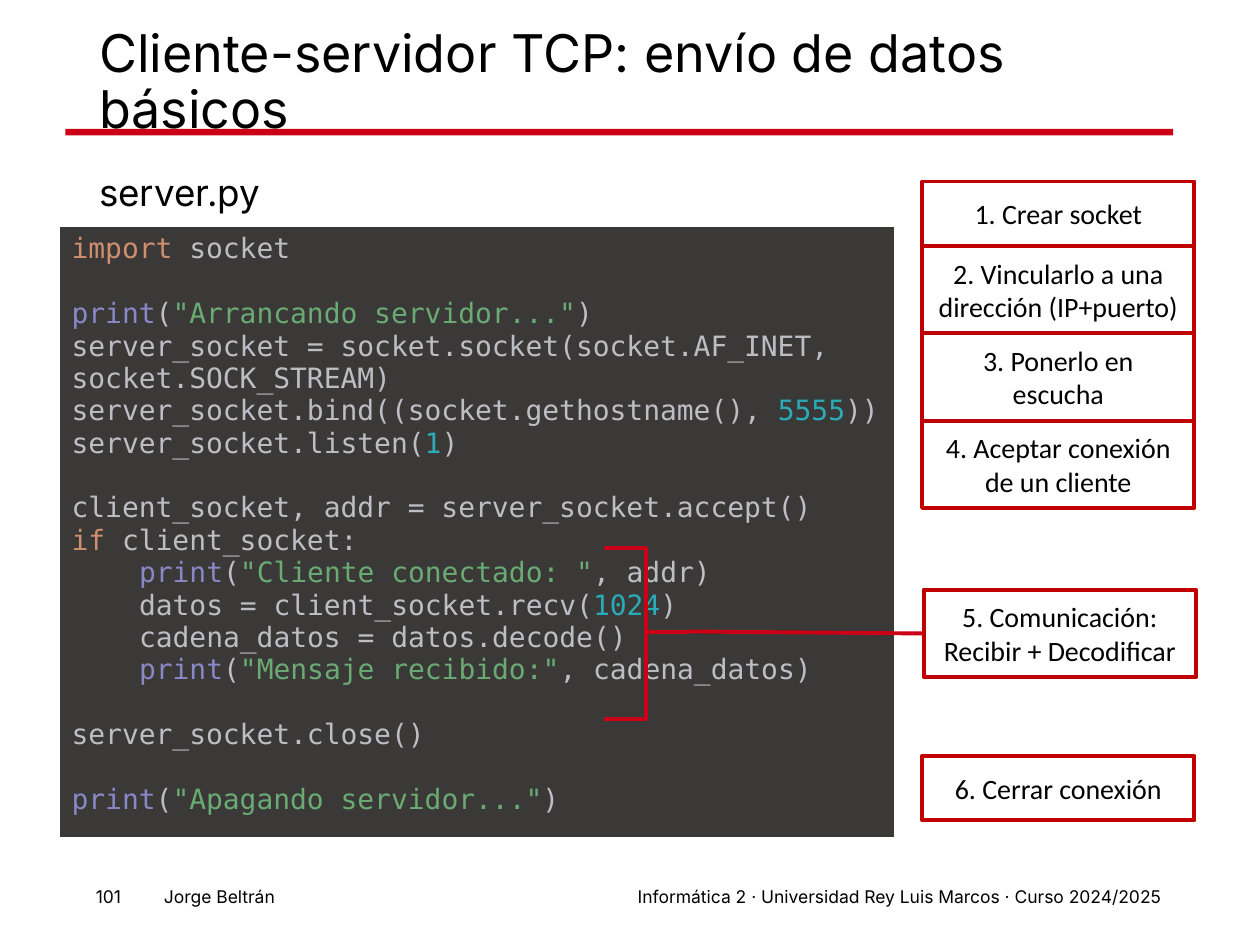
import pptx
import pptx.dml.color
import pptx.enum.shapes
import pptx.enum.text
import pptx.oxml
import pptx.oxml.ns
import pptx.util
from pptx.util import Cm

COLORS = {
    "rule": "CB0017",
    "border": "C00000",
    "black": "000000",
    "white": "FFFFFF",
    "panel": "3B3838",
    "plain": "BCBEC4",
    "keyword": "CF8E6D",
    "builtin": "8888C6",
    "string": "6AAB73",
    "number": "2AACB8",
}
ALIGN = pptx.enum.text.PP_ALIGN
ANCHOR = pptx.enum.text.MSO_ANCHOR
SHAPES = pptx.enum.shapes.MSO_SHAPE
CODE_SIZE = 16
CODE_LINE_HEIGHT = 18.6
CODE_INDENT = Cm(1.36)


def print_call(string, rest=")"):
    return [("print", "builtin"), ("(", "plain"), (string, "string"), (rest, "plain")]


# Each line: tokens, indent level, whether a gap of one line comes before it
CODE = [
    ([("import ", "keyword"), ("socket", "plain")], 0, False),
    (print_call('"Arrancando servidor..."'), 0, True),
    ([("server_socket = socket.socket(socket.AF_INET, socket.SOCK_STREAM)", "plain")], 0, False),
    ([("server_socket.bind((socket.gethostname(), ", "plain"), ("5555", "number"),
      ("))", "plain")], 0, False),
    ([("server_socket.listen(", "plain"), ("1", "number"), (")", "plain")], 0, False),
    ([("client_socket, addr = server_socket.accept()", "plain")], 0, True),
    ([("if ", "keyword"), ("client_socket:", "plain")], 0, False),
    (print_call('"Cliente conectado: "', ", addr)"), 1, False),
    ([("datos = client_socket.recv(", "plain"), ("1024", "number"), (")", "plain")], 1, False),
    ([("cadena_datos = datos.decode()", "plain")], 1, False),
    (print_call('"Mensaje recibido:"', ", cadena_datos)"), 1, False),
    ([("server_socket.close()", "plain")], 0, True),
    (print_call('"Apagando servidor..."'), 0, True),
]


def rgb(name):
    return pptx.dml.color.RGBColor.from_string(COLORS[name])


def set_font(paragraph, name, size, color="black"):
    paragraph.font.name = name
    paragraph.font.size = pptx.util.Pt(size)
    paragraph.font.color.rgb = rgb(color)


def add_text(slide, text, left, top, width, height, size):
    """Add a one-paragraph text box and return its frame and paragraph."""
    frame = slide.shapes.add_textbox(Cm(left), Cm(top), Cm(width), Cm(height)).text_frame
    frame.word_wrap = True
    paragraph = frame.paragraphs[0]
    paragraph.text = text
    set_font(paragraph, "Inter", size)
    return frame, paragraph


def add_heading(slide):
    frame, title = add_text(slide, "Cliente-servidor TCP: envío de datos básicos",
                            1.75, 1.02, 21.89, 1.32, 29.7)
    frame.vertical_anchor = ANCHOR.MIDDLE
    title.line_spacing = 0.9
    _, file_name = add_text(slide, "server.py", 1.75, 3.12, 21.89, 1.27, 21)
    file_name.line_spacing = 1.2
    file_name.space_before = pptx.util.Pt(7.5)


def add_footer(slide, text, left, width):
    frame, paragraph = add_text(slide, text, left, 17.73, width, 0.69, 10)
    frame.auto_size = pptx.enum.text.MSO_AUTO_SIZE.SHAPE_TO_FIT_TEXT
    paragraph.alignment = ALIGN.RIGHT


def add_rule(slide):
    rule = slide.shapes.add_shape(SHAPES.RECTANGLE, Cm(1.32), Cm(2.6), Cm(22.33), Cm(0.13))
    rule.shadow.inherit = False
    rule.fill.solid()
    rule.fill.fore_color.rgb = rgb("rule")
    rule.line.fill.background()


def set_borders(cell, widths):
    """Give a cell white borders; widths maps the side tag to points."""
    properties = cell._tc.get_or_add_tcPr()
    for index, (tag, width) in enumerate(widths.items()):
        border = pptx.oxml.parse_xml(
            f'<a:{tag} {pptx.oxml.ns.nsdecls("a")} w="{pptx.util.Pt(width)}"><a:solidFill>'
            f'<a:srgbClr val="{COLORS["white"]}"/></a:solidFill></a:{tag}>')
        properties.insert(index, border)


def add_code(slide):
    table = slide.shapes.add_table(1, 1, Cm(1.19), Cm(4.57), Cm(16.84), Cm(11.76)).table
    cell = table.cell(0, 0)
    cell.fill.solid()
    cell.fill.fore_color.rgb = rgb("panel")
    set_borders(cell, {"lnL": 1, "lnR": 1, "lnT": 1, "lnB": 3})
    frame = cell.text_frame
    for index, (tokens, level, gap) in enumerate(CODE):
        paragraph = frame.add_paragraph() if index else frame.paragraphs[0]
        set_font(paragraph, "DejaVu Sans Mono", CODE_SIZE, "plain")
        paragraph.font.bold = False
        if gap:
            paragraph.space_before = pptx.util.Pt(CODE_LINE_HEIGHT)
        if level:
            paragraph._p.get_or_add_pPr().set("marL", str(level * CODE_INDENT))
        for text, color in tokens:
            run = paragraph.add_run()
            run.text = text
            run.font.color.rgb = rgb(color)


def style_outline(shape, color):
    shape.shadow.inherit = False
    shape.fill.background()
    shape.line.color.rgb = rgb(color)
    shape.line.width = pptx.util.Pt(2.25)


def add_step(slide, text, top, height, left=18.59):
    step = slide.shapes.add_shape(SHAPES.RECTANGLE, Cm(left), Cm(top), Cm(5.49), Cm(height))
    style_outline(step, "border")
    frame = step.text_frame
    frame.word_wrap = True
    frame.vertical_anchor = ANCHOR.MIDDLE
    frame.text = text
    for paragraph in frame.paragraphs:
        paragraph.alignment = ALIGN.CENTER
        set_font(paragraph, "Calibri", 16)
    return step


def add_steps(slide):
    """Add the six steps and return the communication step."""
    short, tall = 1.3, 1.76
    top = 3.66
    for text, height in [
        ("1. Crear socket", short),
        ("2. Vincularlo a una dirección (IP+puerto)", tall),
        ("3. Ponerlo en escucha", tall),
        ("4. Aceptar conexión de un cliente", tall),
    ]:
        add_step(slide, text, top, height)
        top += height
    communication = add_step(slide, "5. Comunicación:\nRecibir + Decodificar",
                             11.89, tall, left=18.62)
    add_step(slide, "6. Cerrar conexión", 15.24, short)
    return communication


def add_bracket(slide, step):
    """Bracket the communication lines of the code and link them to their step."""
    connector = slide.shapes.add_connector(
        pptx.enum.shapes.MSO_CONNECTOR.STRAIGHT, Cm(18.62), Cm(12.77), Cm(13.87), Cm(12.73))
    connector.begin_connect(step, 1)
    connector.line.color.rgb = rgb("rule")
    connector.line.width = pptx.util.Pt(2.25)
    connector._element.spPr.append(
        pptx.oxml.parse_xml(f'<a:effectLst {pptx.oxml.ns.nsdecls("a")}/>'))
    brace = slide.shapes.add_shape(SHAPES.RIGHT_BRACE, Cm(12.17), Cm(11.05), Cm(1.7), Cm(3.45))
    brace.adjustments[0] = 0
    brace.adjustments[1] = 0.49
    style_outline(brace, "rule")


def main():
    presentation = pptx.Presentation()
    presentation.slide_width = Cm(25.4)
    presentation.slide_height = Cm(19.05)
    slide = presentation.slides.add_slide(presentation.slide_layouts[6])
    add_rule(slide)
    add_footer(slide, "Informática 2 · Universidad Rey Luis Marcos · Curso 2024/2025", 6.1, 17.55)
    add_footer(slide, "Jorge Beltrán", 0.53, 5.26)
    add_footer(slide, "101", 1.47, 1.22)
    add_heading(slide)
    add_code(slide)
    communication = add_steps(slide)
    add_bracket(slide, communication)
    presentation.save("out.pptx")


if __name__ == "__main__":
    main()
